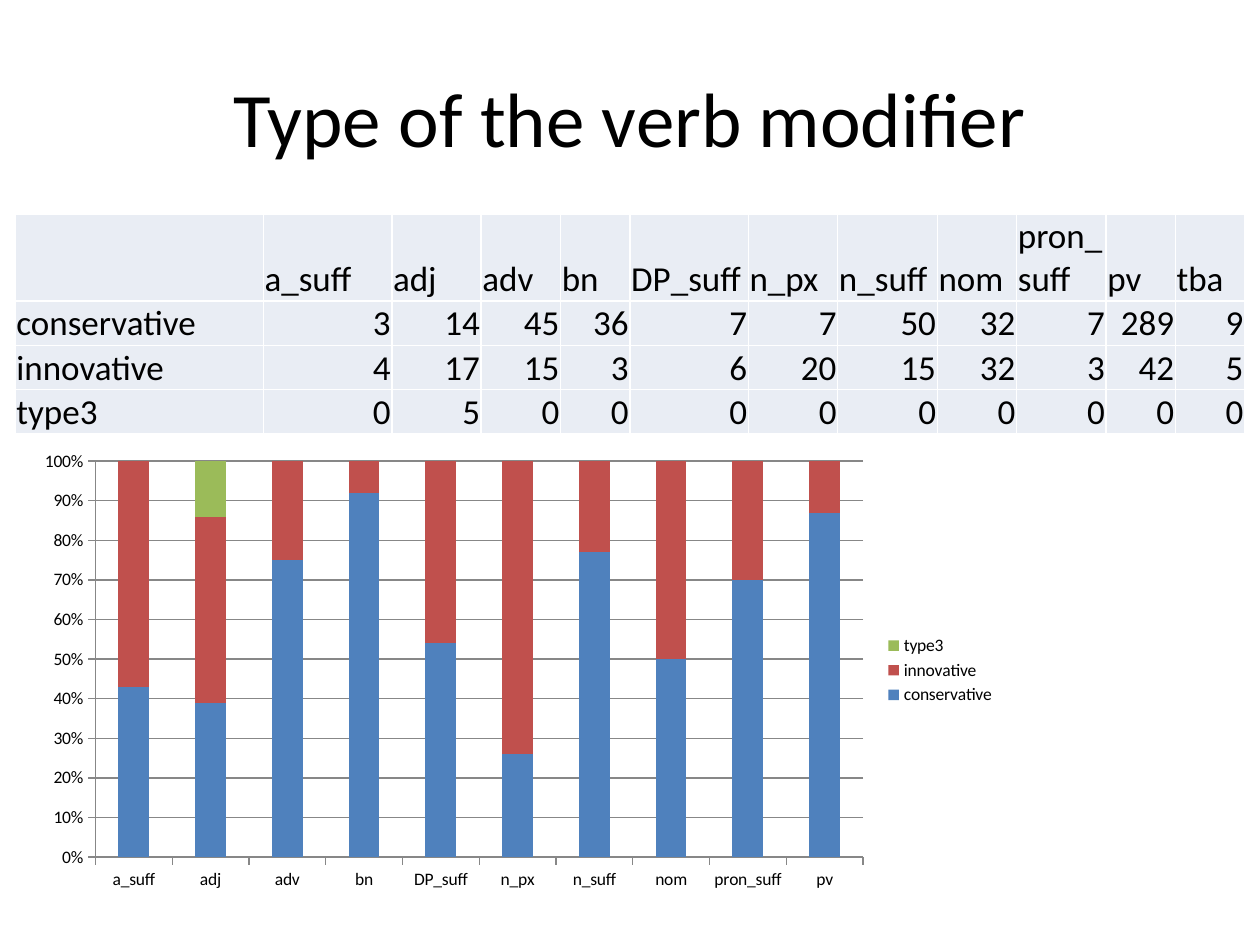
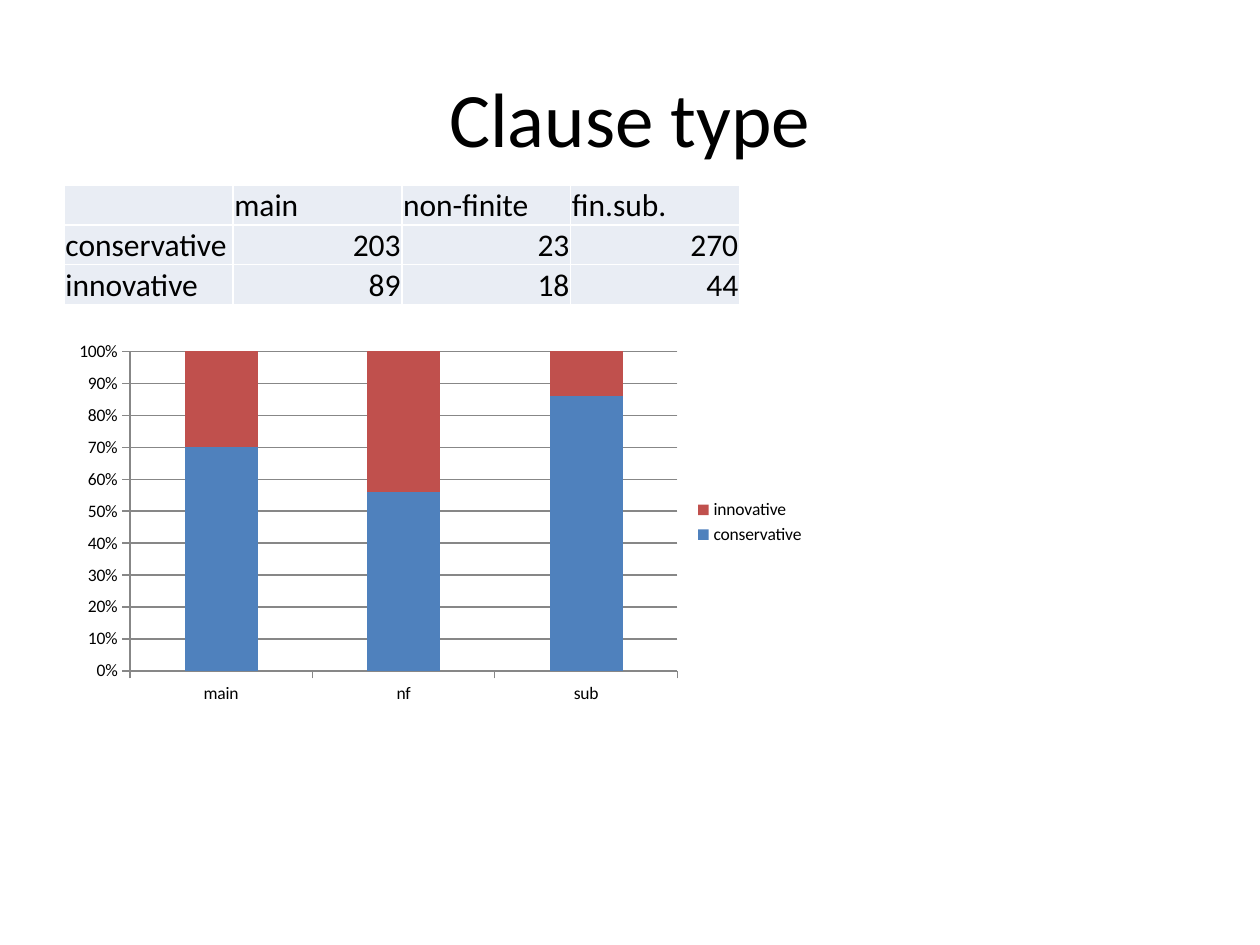
from pptx import Presentation
from pptx.chart import data as chart_data
from pptx.dml.color import RGBColor
from pptx.enum import chart as charts, text
from pptx.util import Inches, Pt

BLACK = RGBColor(0x00, 0x00, 0x00)
GREY = RGBColor(0x87, 0x87, 0x87)
CELL_FILL = RGBColor(0xE9, 0xED, 0xF4)
SERIES_COLOURS = [
    RGBColor(0x4F, 0x81, 0xBD),
    RGBColor(0xC0, 0x50, 0x4D),
    RGBColor(0x9B, 0xBB, 0x59),
]
FONT = "Calibri"
ROW_HEIGHT = Inches(0.21)
CELL_MARGIN = Inches(0.01)

MODIFIERS = ["a_suff", "adj", "adv", "bn", "DP_suff", "n_px", "n_suff",
             "nom", "pron_suff", "pv", "tba"]
MODIFIER_COUNTS = {
    "conservative": [3, 14, 45, 36, 7, 7, 50, 32, 7, 289, 9],
    "innovative": [4, 17, 15, 3, 6, 20, 15, 32, 3, 42, 5],
    "type3": [0, 5, 0, 0, 0, 0, 0, 0, 0, 0, 0],
}
MODIFIER_WIDTHS = [1.97, 1.02, 0.71, 0.63, 0.55, 0.94, 0.71, 0.79, 0.63,
                   0.71, 0.55, 0.55]
CLAUSES = ["main", "non-finite", "fin.sub."]
CLAUSE_COUNTS = {
    "conservative": [203, 23, 270],
    "innovative": [89, 18, 44],
}


def style_font(font, size):
    font.name = FONT
    font.size = Pt(size)
    font.color.rgb = BLACK


def write(frame, content, size=18, align=text.PP_ALIGN.LEFT,
          anchor=text.MSO_ANCHOR.MIDDLE):
    frame.vertical_anchor = anchor
    para = frame.paragraphs[0]
    para.alignment = align
    if content:
        span = para.add_run()
        span.text = content
        style_font(span.font, size)


def percentages(counts):
    """Turn each category's counts into whole shares of its total."""
    totals = [sum(column) for column in zip(*counts.values())]
    return {name: [round(100 * value / total)
                   for value, total in zip(values, totals)]
            for name, values in counts.items()}


class Deck:
    def __init__(self):
        self.deck = Presentation()
        self.deck.slide_width = Inches(10)
        self.deck.slide_height = Inches(7.5)
        self.page = None

    def add_page(self, title):
        self.page = self.deck.slides.add_slide(self.deck.slide_layouts[5])
        box = self.page.shapes.title
        box.left, box.top = Inches(0.5), Inches(0.3)
        box.width, box.height = Inches(9), Inches(1.25)
        write(box.text_frame, title, size=44, align=text.PP_ALIGN.CENTER)

    def add_counts(self, left, top, height, widths, headings, counts, size):
        rows = [["", *headings]]
        rows += [[name, *values] for name, values in counts.items()]
        frame = self.page.shapes.add_table(
            len(rows), len(widths), Inches(left), Inches(top),
            Inches(sum(widths)), Inches(height))
        table = frame.table
        table.first_row = table.horz_banding = False
        for column, width in zip(table.columns, widths):
            column.width = Inches(width)
        for row, values in zip(table.rows, rows):
            row.height = ROW_HEIGHT
            for cell, value in zip(row.cells, values):
                self.fill_cell(cell, value, size)
        frame.height = Inches(height)

    def fill_cell(self, cell, value, size):
        cell.fill.solid()
        cell.fill.fore_color.rgb = CELL_FILL
        cell.margin_left = cell.margin_right = cell.margin_top = CELL_MARGIN
        cell.margin_bottom = 0
        is_number = isinstance(value, int)
        write(cell.text_frame, str(value), size=size,
              align=text.PP_ALIGN.RIGHT if is_number else text.PP_ALIGN.LEFT)
        cell.vertical_anchor = text.MSO_ANCHOR.BOTTOM

    def add_shares(self, left, top, width, height, categories, counts):
        """Add a 100% stacked column chart of the counts."""
        shares = chart_data.CategoryChartData()
        shares.categories = categories
        for name, values in percentages(counts).items():
            shares.add_series(name, values[:len(categories)])
        chart = self.page.shapes.add_chart(
            charts.XL_CHART_TYPE.COLUMN_STACKED_100, Inches(left), Inches(top),
            Inches(width), Inches(height), shares).chart
        style_font(chart.font, 10)
        chart.has_title = False
        chart.has_legend = True
        chart.legend.position = charts.XL_LEGEND_POSITION.RIGHT
        chart.legend.include_in_layout = False

        plot = chart.plots[0]
        plot.gap_width, plot.overlap = 150, 100
        plot.vary_by_categories = False
        for series, colour in zip(plot.series, SERIES_COLOURS):
            series.format.fill.solid()
            series.format.fill.fore_color.rgb = colour

        value_axis = chart.value_axis
        value_axis.has_major_gridlines = True
        value_axis.tick_labels.number_format = "0%"
        value_axis.tick_labels.number_format_is_linked = False
        for axis in (chart.category_axis, value_axis):
            axis.major_tick_mark = charts.XL_TICK_MARK.OUTSIDE
        for part in (chart.category_axis, value_axis,
                     value_axis.major_gridlines):
            part.format.line.color.rgb = GREY
            part.format.line.width = Pt(0.75)


def main():
    deck = Deck()

    deck.add_page("Type of the verb modifier")
    deck.add_counts(0.12, 1.7, 1.71, MODIFIER_WIDTHS, MODIFIERS,
                    MODIFIER_COUNTS, size=20)
    deck.add_shares(0.2, 3.51, 7.8, 3.62, MODIFIERS[:-1], MODIFIER_COUNTS)

    deck.add_page("Clause type")
    deck.add_counts(0.51, 1.47, 0.93, [1.34] * 4, CLAUSES, CLAUSE_COUNTS,
                    size=18)
    deck.add_shares(0.51, 2.65, 5.98, 2.99, ["main", "nf", "sub"],
                    CLAUSE_COUNTS)

    deck.deck.save("out.pptx")


if __name__ == "__main__":
    main()
